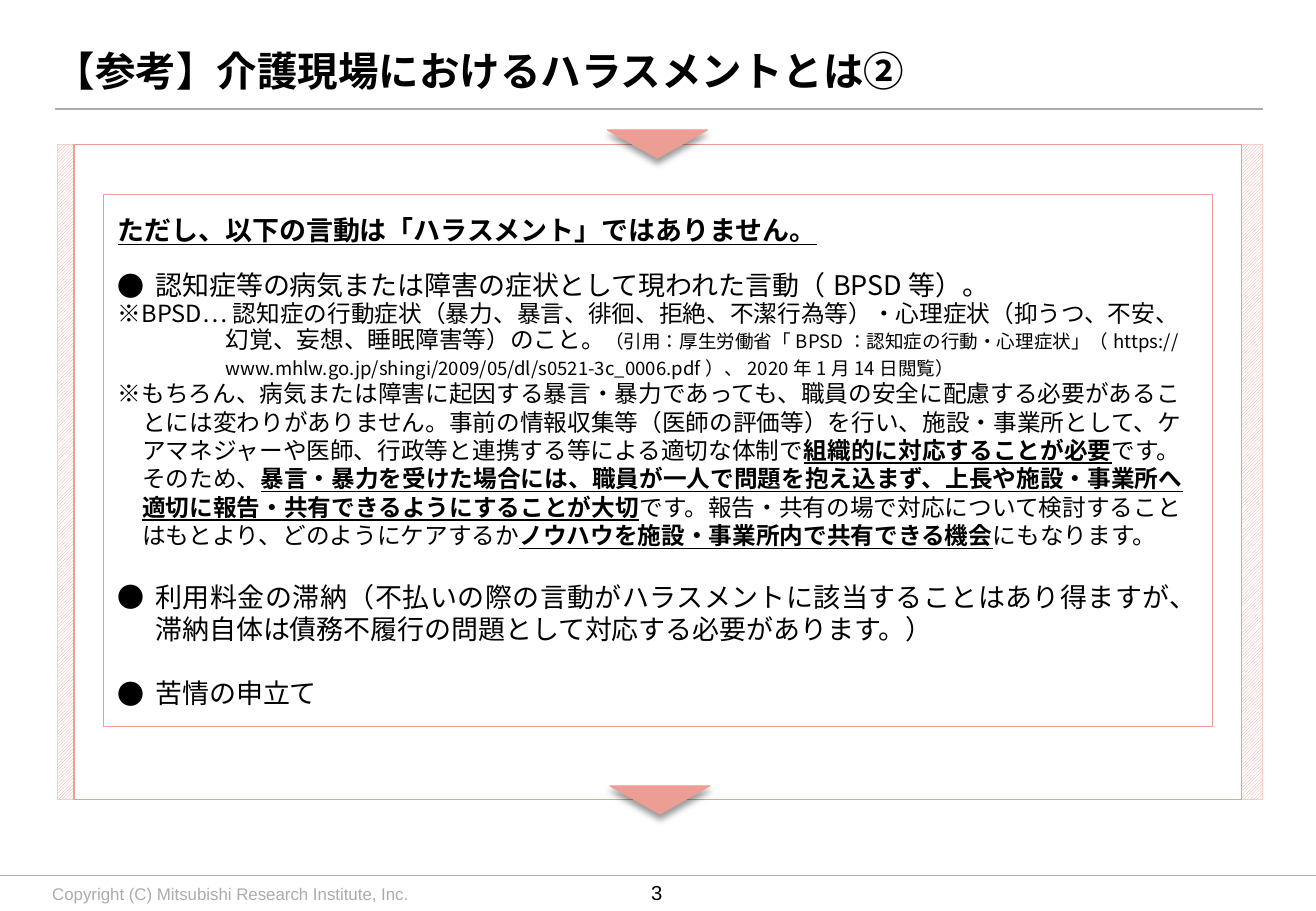
from lxml.etree import SubElement
from pptx import Presentation
from pptx.dml.color import RGBColor
from pptx.enum.dml import MSO_PATTERN
from pptx.enum.lang import MSO_LANGUAGE_ID
from pptx.enum.shapes import MSO_CONNECTOR, MSO_SHAPE
from pptx.enum.text import MSO_ANCHOR, PP_ALIGN
from pptx.oxml.ns import qn
from pptx.util import Inches, Pt


class Theme:
    black = RGBColor.from_string("000000")
    white = RGBColor.from_string("FFFFFF")
    gray = RGBColor.from_string("ACACAC")
    pink = RGBColor.from_string("ED9E94")
    pale = RGBColor.from_string("F6CECA")
    latin = "Arial"
    kanji = "Noto Sans CJK JP"
    title = 24
    lead = 16
    body = 14
    page = 12
    cite = 11
    foot = 10


deck = Presentation()
deck.slide_width, deck.slide_height = Inches(10.83), Inches(7.5)
slide = deck.slides.add_slide(deck.slide_layouts[6])
shapes = slide.shapes


def style(para, name, size, color):
    font = para.font
    font.size, font.name = Pt(size), name
    font.color.rgb = color
    font.language_id = MSO_LANGUAGE_ID.JAPANESE
    props = para._p.get_or_add_pPr().find(qn("a:defRPr"))
    SubElement(props, qn("a:ea")).set("typeface", name)


def panel(kind, box, fill, line):
    shape = shapes.add_shape(kind, *map(Inches, box))
    shape.shadow.inherit = False
    if fill:
        shape.fill.solid()
        shape.fill.fore_color.rgb = fill
    shape.line.color.rgb = line
    shape.line.width = Pt(0.75)
    return shape


for left, right, top, width in [(0, 10.83, 7.21, 0.75), (0.45, 10.39, 0.9, 1)]:
    rule = shapes.add_connector(
        MSO_CONNECTOR.STRAIGHT, Inches(left), Inches(top), Inches(right), Inches(top))
    rule.line.color.rgb = Theme.gray
    rule.line.width = Pt(width)
    SubElement(rule._element.spPr, qn("a:effectLst"))

labels = [
    ("Copyright (C) Mitsubishi Research Institute, Inc.", (0.43, 7.27, 5, 0.17),
     (0, 0, 0, 0), Theme.latin, Theme.foot, Theme.gray, PP_ALIGN.LEFT, False),
    ("3", (5.15, 7.21, 0.51, 0.28),
     (0.1, 0.05, 0.1, 0.05), Theme.latin, Theme.page, Theme.black, PP_ALIGN.CENTER, False),
    ("【参考】介護現場におけるハラスメントとは②", (0.45, 0.23, 9.94, 0.69),
     (0, 0.05, 0.1, 0.05), Theme.kanji, Theme.title, Theme.black, PP_ALIGN.LEFT, True),
]
for text, box, inset, name, size, color, align, bold in labels:
    frame = shapes.add_textbox(*map(Inches, box)).text_frame
    frame.word_wrap = True
    frame.vertical_anchor = MSO_ANCHOR.MIDDLE
    (frame.margin_left, frame.margin_top,
     frame.margin_right, frame.margin_bottom) = map(Inches, inset)
    para = frame.paragraphs[0]
    para.text = text
    para.alignment = align
    style(para, name, size, color)
    para.font.bold = bold

hatch = panel(MSO_SHAPE.RECTANGLE, (0.47, 1.19, 9.92, 5.39), None, Theme.pale)
hatch.fill.patterned()
hatch.fill.pattern = MSO_PATTERN.DARK_UPWARD_DIAGONAL
hatch.fill.fore_color.rgb = Theme.pink
hatch.fill.back_color.rgb = Theme.white
panel(MSO_SHAPE.RECTANGLE, (0.61, 1.19, 9.61, 5.39), Theme.white, Theme.pink)
card = panel(MSO_SHAPE.RECTANGLE, (0.85, 1.6, 9.13, 4.38), Theme.white, Theme.pink)

for left, top in [(5, 1.07), (5.02, 6.47)]:
    arrow = panel(MSO_SHAPE.ISOSCELES_TRIANGLE, (left, top, 0.82, 0.23), Theme.pink, Theme.pink)
    arrow.rotation = 180
    effects = arrow._element.spPr.find(qn("a:effectLst"))
    shade = SubElement(effects, qn("a:outerShdw"), blurRad=str(Pt(4)), dist=str(Pt(3)),
                       dir="5400000", rotWithShape="0")
    tint = SubElement(shade, qn("a:srgbClr"), val=str(Theme.black))
    SubElement(tint, qn("a:alpha"), val="40000")

frame = card.text_frame
frame.word_wrap = True
frame.vertical_anchor = MSO_ANCHOR.TOP
frame.margin_left = frame.margin_right = Inches(0.12)
frame.margin_top = frame.margin_bottom = Inches(0.16)

PLAIN, STRONG, SMALL = range(3)
notes = [
    (Theme.lead, 19, 0, 0, False, [
        ("ただし、以下の言動は「ハラスメント」ではありません。", STRONG)]),
    (Theme.lead, 19, 13.5, 0.31, True, [
        ("認知症等の病気または障害の症状として現われた言動（BPSD等）。", PLAIN)]),
    (Theme.body, 15.5, 0, 0.89, False, [
        ("※BPSD…認知症の行動症状（暴力、暴言、徘徊、拒絶、不潔行為等）・心理症状（抑うつ、不安、幻覚、妄想、睡眠障害等）のこと。", PLAIN),
        ("（引用：厚生労働省「BPSD：認知症の行動・心理症状」（https://www.mhlw.go.jp/shingi/2009/05/dl/s0521-3c_0006.pdf）、2020年1月14日閲覧）", SMALL)]),
    (Theme.body, 16.8, 0, 0.2, False, [
        ("※もちろん、病気または障害に起因する暴言・暴力であっても、職員の安全に配慮する必要があることには変わりがありません。事前の情報収集等（医師の評価等）を行い、施設・事業所として、ケアマネジャーや医師、行政等と連携する等による適切な体制で", PLAIN),
        ("組織的に対応することが必要", STRONG),
        ("です。\nそのため、", PLAIN),
        ("暴言・暴力を受けた場合には、職員が一人で問題を抱え込まず、上長や施設・事業所へ適切に報告・共有できるようにすることが大切", STRONG),
        ("です。報告・共有の場で対応について検討することはもとより、どのようにケアするか", PLAIN),
        ("ノウハウを施設・事業所内で共有できる機会", STRONG),
        ("にもなります。", PLAIN)]),
    (Theme.lead, 19, 18.5, 0.31, True, [
        ("利用料金の滞納（不払いの際の言動がハラスメントに該当することはあり得ますが、滞納自体は債務不履行の問題として対応する必要があります。）", PLAIN)]),
    (Theme.lead, 19, 19, 0.31, True, [("苦情の申立て", PLAIN)]),
]
for index, (size, pitch, gap, indent, dot, runs) in enumerate(notes):
    para = frame.add_paragraph() if index else frame.paragraphs[0]
    para.alignment = PP_ALIGN.JUSTIFY if size == Theme.lead else PP_ALIGN.LEFT
    para.line_spacing = Pt(pitch)
    para.space_before = Pt(gap)
    props = para._p.get_or_add_pPr()
    props.set("marL", str(Inches(indent)))
    props.set("indent", str(-Inches(indent)))
    if dot:
        SubElement(props, qn("a:buFont"), typeface=Theme.kanji)
        SubElement(props, qn("a:buChar"), char="●")
    style(para, Theme.kanji, size, Theme.black)
    for text, mode in runs:
        for row, part in enumerate(text.split("\n")):
            if row:
                para.add_line_break()
            run = para.add_run()
            run.text = part
            if mode == STRONG:
                run.font.bold = run.font.underline = True
            elif mode == SMALL:
                run.font.size = Pt(Theme.cite)

deck.save("out.pptx")
